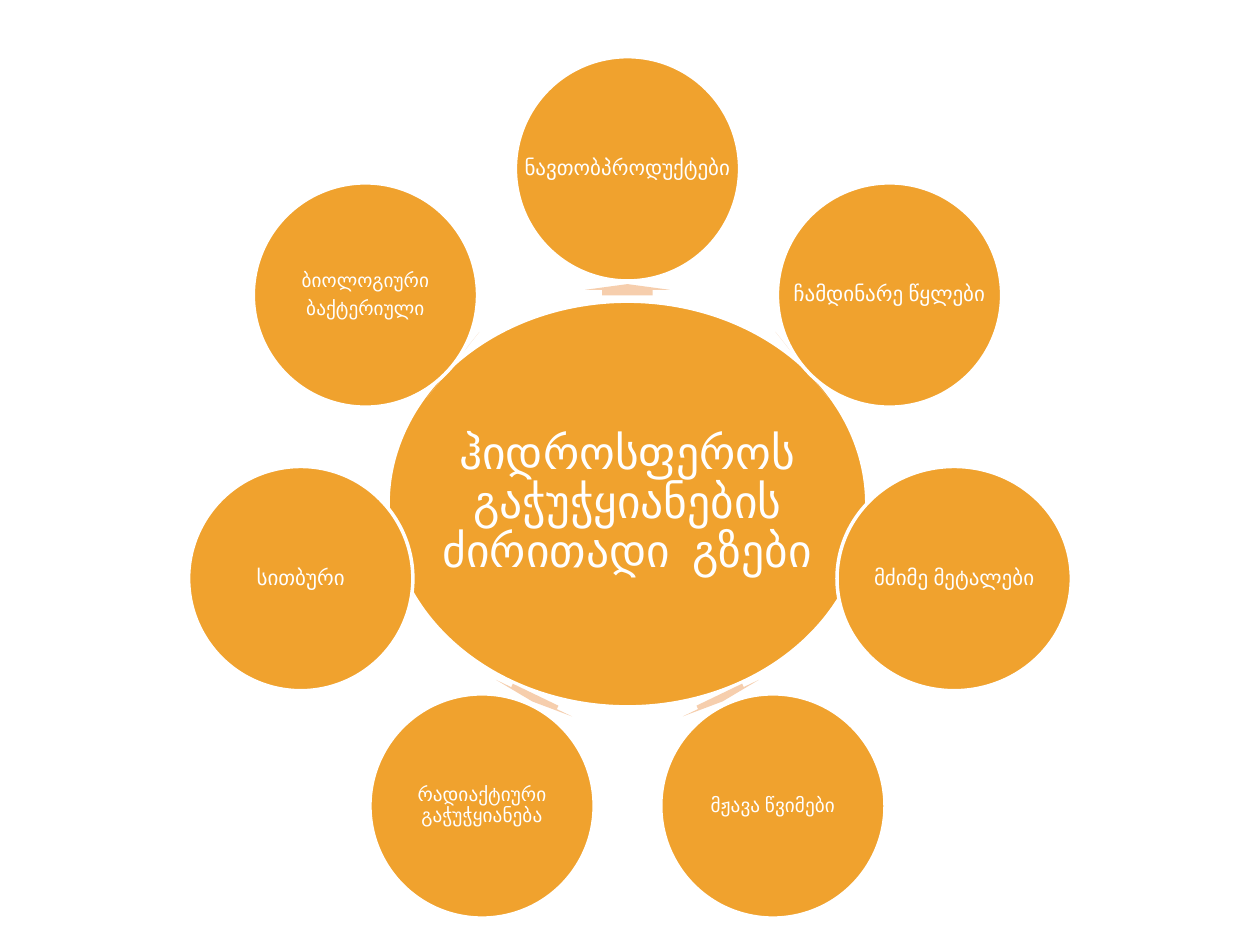
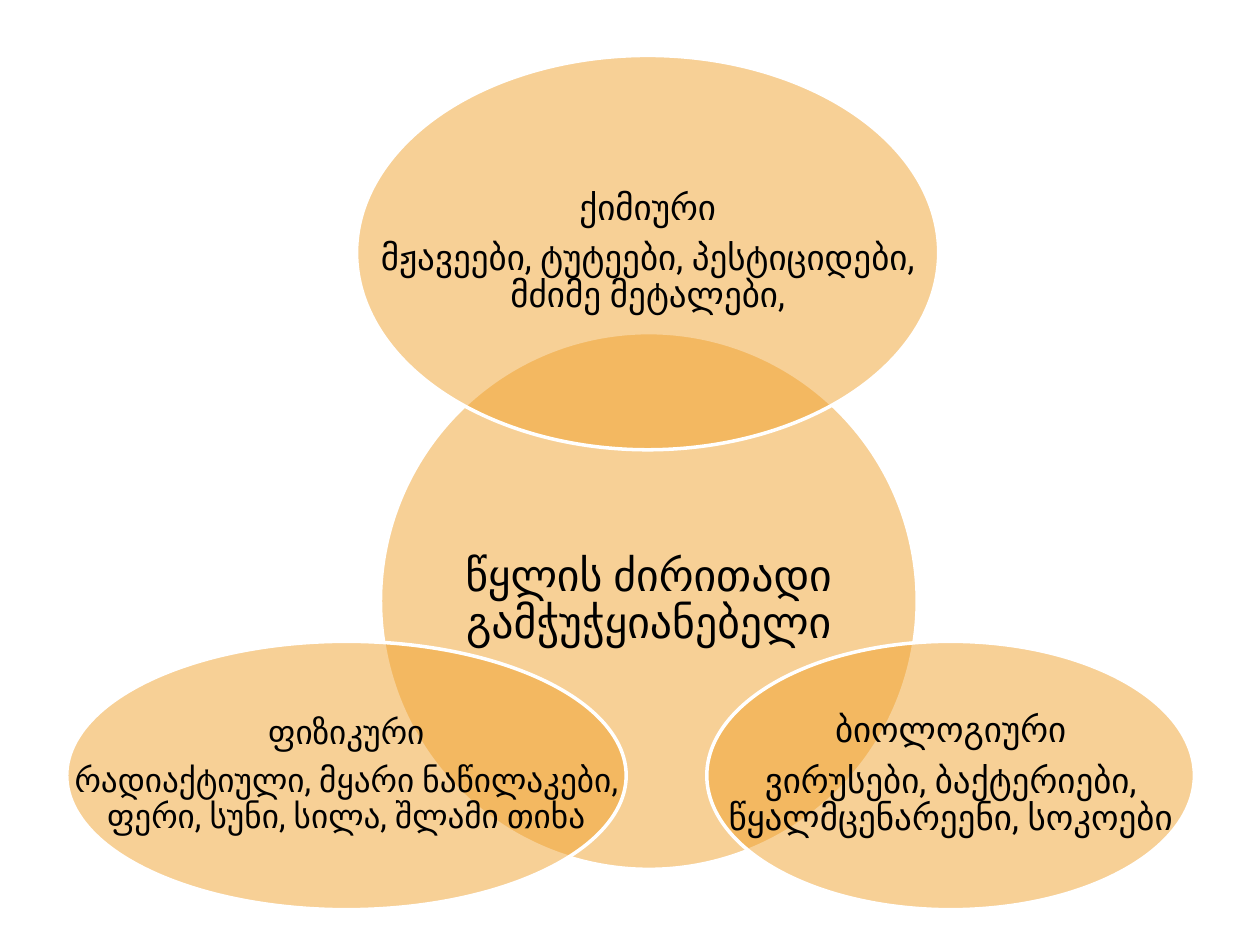
"""Builds two diagram slides on how water becomes polluted."""
import math

from lxml import etree
from pptx import Presentation
from pptx import util as u
from pptx.dml.color import RGBColor
from pptx.enum import shapes, text
from pptx.oxml.ns import qn

COLOURS = {"orange": "F0A22E", "peach": "F6CEAD", "white": "FFFFFF", "black": "000000"}

HUB = (4.98, 4.0)
RING_RADIUS = 2.66
CIRCLE_SIZE = 1.78

# label, font size, circle width, arrow distance, arrow length, arrow turn
SPOKES = [
    ("ნავთობპროდუქტები", 12, 1.78, 1.7, 0.09, 0),
    ("ჩამდინარე წყლები", 12, 1.78, 1.77, 0, 0),
    ("მძიმე მეტალები", 12, 1.86, 1.82, 0.08, 180),
    ("მჟავა წვიმები", 11, 1.78, 1.71, 0.06, 0),
    ("რადიაქტიური გაჭუჭყიანება", 11, 1.78, 1.71, 0.06, 0),
    ("სითბური", 12, 1.78, 1.82, 0.06, 180),
    ("ბიოლოგიური\nბაქტერიული", 11, 1.78, 1.77, 0, 0),
]

POLLUTANTS = [
    ("წყლის ძირითადი გამჭუჭყიანებელი", 25, (3.02, 2.64, 4.26, 4.26)),
    ("ქიმიური\nმჟავეები, ტუტეები, პესტიციდები, მძიმე მეტალები,", 20, (2.83, 0.44, 4.62, 3.13)),
    ("ბიოლოგიური\nვირუსები, ბაქტერიები, წყალმცენარეენი, სოკოები", 20, (5.61, 5.09, 3.87, 2.13)),
    ("ფიზიკური\nრადიაქტიული, მყარი ნაწილაკები, ფერი, სუნი, სილა, შლამი თიხა", 19,
     (0.53, 5.09, 4.44, 2.13)),
]


class Diagram:
    """Holds the shared style and the current slide."""

    font = "Roboto"
    outline = 2
    line_spacing = 0.9
    space_after = 0.35

    def __init__(self):
        self.deck = Presentation()
        self.deck.slide_width = u.Inches(10)
        self.deck.slide_height = u.Inches(7.5)
        self.page = None

    def new_page(self):
        self.page = self.deck.slides.add_slide(self.deck.slide_layouts[6])

    def colour(self, name):
        return RGBColor.from_string(COLOURS[name])

    def filled_shape(self, kind, area, fill):
        shape = self.page.shapes.add_shape(kind, *map(u.Inches, area))
        shape.shadow.inherit = False
        shape.fill.solid()
        shape.fill.fore_color.rgb = self.colour(fill)
        return shape

    def ellipse(self, area, opacity=100):
        shape = self.filled_shape(shapes.MSO_SHAPE.OVAL, area, "orange")
        shape.line.color.rgb = self.colour("white")
        shape.line.width = u.Pt(self.outline)
        if opacity < 100:
            tint = shape.fill._xPr.find(qn("a:solidFill"))[0]
            etree.SubElement(tint, qn("a:alpha"), val=str(opacity * 1000))

    def arrow(self, area, rotation):
        shape = self.filled_shape(shapes.MSO_SHAPE.RIGHT_ARROW, area, "peach")
        shape.line.fill.background()
        shape.adjustments[0] = 0.6
        shape.adjustments[1] = 0.5
        shape.rotation = rotation

    def label(self, words, area, size, colour, inset):
        box = self.page.shapes.add_textbox(*map(u.Inches, area))
        frame = box.text_frame
        frame.word_wrap = True
        frame.vertical_anchor = text.MSO_ANCHOR.MIDDLE
        frame.margin_left = frame.margin_right = u.Inches(inset)
        frame.margin_top = frame.margin_bottom = u.Inches(inset)
        frame.text = words
        for para in frame.paragraphs:
            para.alignment = text.PP_ALIGN.CENTER
            para.line_spacing = self.line_spacing
            para.space_after = u.Pt(self.space_after * size)
            for span in para.runs:
                span.font.name = self.font
                span.font.size = u.Pt(size)
                span.font.color.rgb = self.colour(colour)


def centred(centre, width, height):
    return centre[0] - width / 2, centre[1] - height / 2, width, height


def on_ring(angle, radius):
    turn = math.radians(angle)
    return HUB[0] + radius * math.cos(turn), HUB[1] + radius * math.sin(turn)


def build_pollution_routes(diagram):
    diagram.new_page()
    hub_area = centred(HUB, 3.8, 3.22)
    diagram.ellipse(hub_area)
    diagram.label("ჰიდროსფეროს გაჭუჭყიანების ძირითადი  გზები", hub_area, 26, "white", 0.04)
    for index, (words, size, width, distance, length, turn) in enumerate(SPOKES):
        angle = 270 + index * 360 / len(SPOKES)
        diagram.arrow(centred(on_ring(angle, distance), length, 0.67), (angle + turn) % 360)
        area = centred(on_ring(angle, RING_RADIUS), width, CIRCLE_SIZE)
        diagram.ellipse(area)
        diagram.label(words, area, size, "white", 0.02)


def build_pollutants(diagram):
    diagram.new_page()
    for words, size, area in POLLUTANTS:
        diagram.ellipse(area, opacity=50)
        diagram.label(words, area, size, "black", 0.03)


def main():
    diagram = Diagram()
    build_pollution_routes(diagram)
    build_pollutants(diagram)
    diagram.deck.save("out.pptx")


if __name__ == "__main__":
    main()
